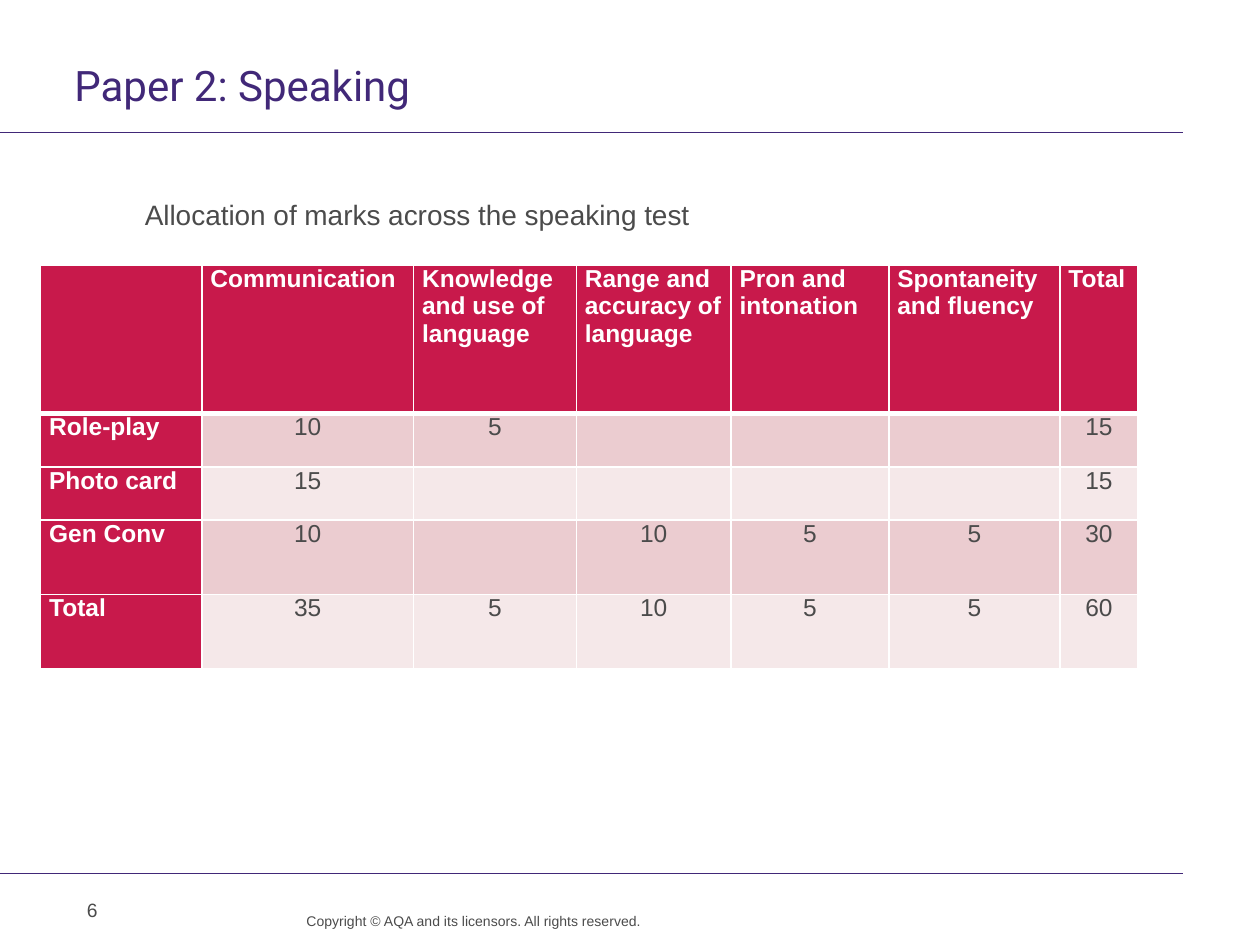
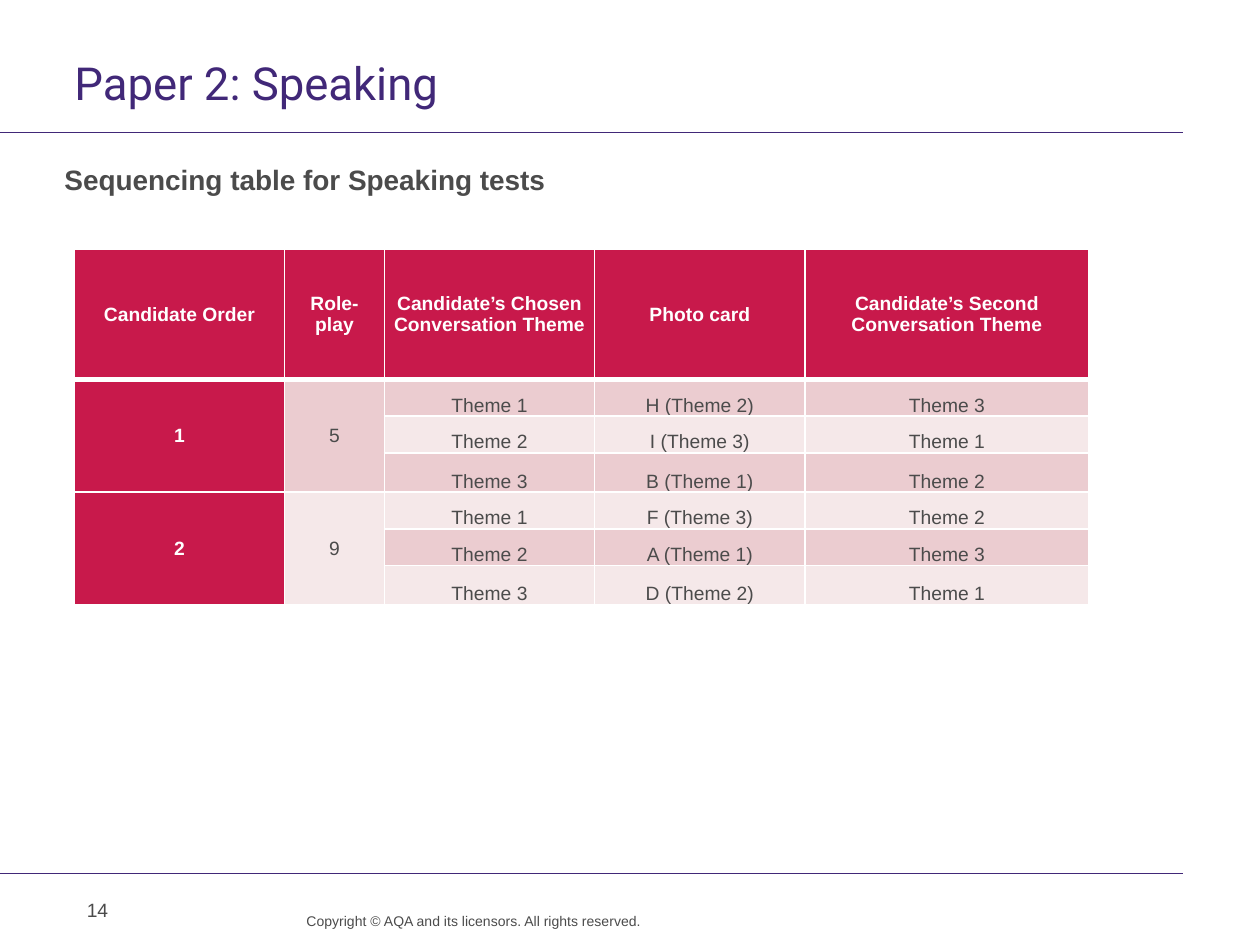
from pptx import Presentation
from pptx.dml.color import RGBColor
from pptx.enum import shapes, text
from pptx.oxml import parse_xml
from pptx.oxml.ns import nsdecls
from pptx.util import Cm, Pt

PURPLE = RGBColor(0x41, 0x28, 0x78)
GREY = RGBColor(0x4B, 0x4B, 0x4B)
RED = RGBColor(0xC8, 0x19, 0x4B)
PINK = RGBColor(0xEB, 0xCC, 0xD0)
PALE = RGBColor(0xF5, 0xE8, 0xE9)
WHITE = RGBColor(0xFF, 0xFF, 0xFF)

LEFT, CENTRE, RIGHT = text.PP_ALIGN.LEFT, text.PP_ALIGN.CENTER, text.PP_ALIGN.RIGHT
TOP, MIDDLE, BOTTOM = (text.MSO_ANCHOR.TOP, text.MSO_ANCHOR.MIDDLE,
                       text.MSO_ANCHOR.BOTTOM)

# Boxes in centimetres: left, top, width, height
HEAD = (1.5, 1.22, 22.35, 1.19)
FOOT = (0, 17.6, 23.85, 1.45)

MARKS = [
    ["", "Communication", "Knowledge and use of language",
     "Range and accuracy of language", "Pron and intonation",
     "Spontaneity and fluency", "Total"],
    ["Role-play", "10", "5", "", "", "", "15"],
    ["Photo card", "15", "", "", "", "", "15"],
    ["Gen Conv", "10", "", "10", "5", "5", "30"],
    ["Total", "35", "5", "10", "5", "5", "60"],
]
ORDER = [
    ["Candidate Order", "Role-play", "Candidate’s Chosen Conversation Theme",
     "Photo card", "Candidate’s Second Conversation Theme"],
    ["1", "5", "Theme 1", "H (Theme 2)", "Theme 3"],
    ["", "", "Theme 2", "I (Theme 3)", "Theme 1"],
    ["", "", "Theme 3", "B (Theme 1)", "Theme 2"],
    ["2", "9", "Theme 1", "F (Theme 3)", "Theme 2"],
    ["", "", "Theme 2", "A (Theme 1)", "Theme 3"],
    ["", "", "Theme 3", "D (Theme 2)", "Theme 1"],
]


def apply(item, **values):
    for name, value in values.items():
        setattr(item, name, value)


def write(frame, words, size, color=GREY, face="Arial", bold=False,
          align=LEFT, line=None):
    para = frame.paragraphs[0]
    apply(para, alignment=align, line_spacing=line and Pt(line))
    run = para.add_run()
    run.text = words
    apply(run.font, size=Pt(size), name=face, bold=bold)
    run.font.color.rgb = color


def shape_text(frame, pads):
    apply(frame, word_wrap=True, auto_size=text.MSO_AUTO_SIZE.NONE,
          vertical_anchor=TOP)
    for side, pad in zip(("left", "top", "right", "bottom"), pads):
        setattr(frame, "margin_" + side, Cm(pad))


def label(slide, box, words, size, pads=(0, 0, 0.25, 0), **style):
    frame = slide.shapes.add_textbox(*map(Cm, box)).text_frame
    shape_text(frame, pads)
    write(frame, words, size, **style)


def rule(slide, left, top, width):
    line = slide.shapes.add_connector(
        shapes.MSO_CONNECTOR.STRAIGHT, Cm(left), Cm(top), Cm(left + width), Cm(top))
    line.line.color.rgb = PURPLE
    line.line.width = Pt(0.6)
    line._element.spPr.append(parse_xml(f"<a:effectLst {nsdecls('a')}/>"))


# Title band with the rule below it
def header(slide, box, words, size):
    left, top, width, high = box
    title = slide.shapes.title
    apply(title, left=Cm(left), top=Cm(top), width=Cm(width), height=Cm(high))
    shape_text(title.text_frame, (0, 0, 0.25, 0))
    write(title.text_frame, words, size, color=PURPLE, face="Roboto", line=28)
    rule(slide, 0, top + high + 0.26, left + width)


# Rule, page number and copyright line
def footer(slide, box, page):
    left, top, width, high = box
    rule(slide, left, top, width)
    label(slide, (left + 1.5, top + 0.38, 5.92, 1.02), page, 11,
          pads=(0.25, 0.13, 0.25, 0.13))
    label(slide, (left + 5.49, top + 0.79, 7.44, 0.66),
          "Copyright © AQA and its licensors. All rights reserved.", 8,
          pads=(0, 0, 0, 0), align=RIGHT, line=10)


def border(cell, row):
    props = cell._tc.get_or_add_tcPr()
    widths = {"L": 1, "R": 1, "T": 3 if row == 1 else 1, "B": 3 if row == 0 else 1}
    for spot, (side, width) in enumerate(widths.items()):
        props.insert(spot, parse_xml(
            f'<a:ln{side} {nsdecls("a")} w="{Pt(width)}"><a:solidFill>'
            f'<a:srgbClr val="{WHITE}"/></a:solidFill></a:ln{side}>'))


# Table with a red head row and key column; place(row, col) gives align and anchor
def grid(slide, spot, data, cols, rows, size, place):
    box = (*spot, sum(cols), sum(rows))
    table = slide.shapes.add_table(len(rows), len(cols), *map(Cm, box)).table
    for col, width in zip(table.columns, cols):
        col.width = Cm(width)
    for row, high in zip(table.rows, rows):
        row.height = Cm(high)
    for r, line in enumerate(data):
        for c, words in enumerate(line):
            cell = table.cell(r, c)
            key = r == 0 or c == 0
            align, anchor = place(r, c)
            apply(cell, margin_left=Cm(0.17), margin_right=Cm(0.17),
                  margin_top=0, margin_bottom=0, vertical_anchor=anchor)
            cell.fill.solid()
            cell.fill.fore_color.rgb = RED if key else PINK if r % 2 else PALE
            border(cell, r)
            if words:
                write(cell.text_frame, words, size, bold=key, align=align,
                      color=WHITE if key else GREY)
    return table


def start(deck, size, page):
    slide = deck.slides.add_slide(deck.slide_layouts[5])
    header(slide, HEAD, "Paper 2: Speaking", size)
    footer(slide, FOOT, page)
    return slide


def marks(deck):
    slide = start(deck, 24, "6")
    label(slide, (2.92, 3.99, 19.99, 1.2),
          "Allocation of marks across the speaking test", 16)
    grid(slide, (0.82, 5.34), MARKS,
         cols=[3.25, 4.27, 3.28, 3.12, 3.18, 3.45, 1.57],
         rows=[3, 1.07, 1.07, 1.5, 1.5], size=14,
         place=lambda r, c: (CENTRE if r and c else LEFT, TOP))


def order(deck):
    slide = start(deck, 26, "14")
    label(slide, (1.3, 3.25, 17.81, 1.2),
          "Sequencing table for Speaking tests", 16, bold=True, line=20)
    table = grid(slide, (1.5, 5.03), ORDER,
                 cols=[4.24, 2.01, 4.24, 4.24, 5.72],
                 rows=[2.62] + [0.74, 0.74, 0.79] * 2, size=11,
                 place=lambda r, c: (CENTRE, BOTTOM if r and c > 1 else MIDDLE))
    for r in (1, 4):
        for c in (0, 1):
            table.cell(r, c).merge(table.cell(r + 2, c))


def main():
    deck = Presentation()
    apply(deck, slide_width=Cm(25.4), slide_height=Cm(19.05))
    marks(deck)
    order(deck)
    deck.save("out.pptx")


if __name__ == "__main__":
    main()
